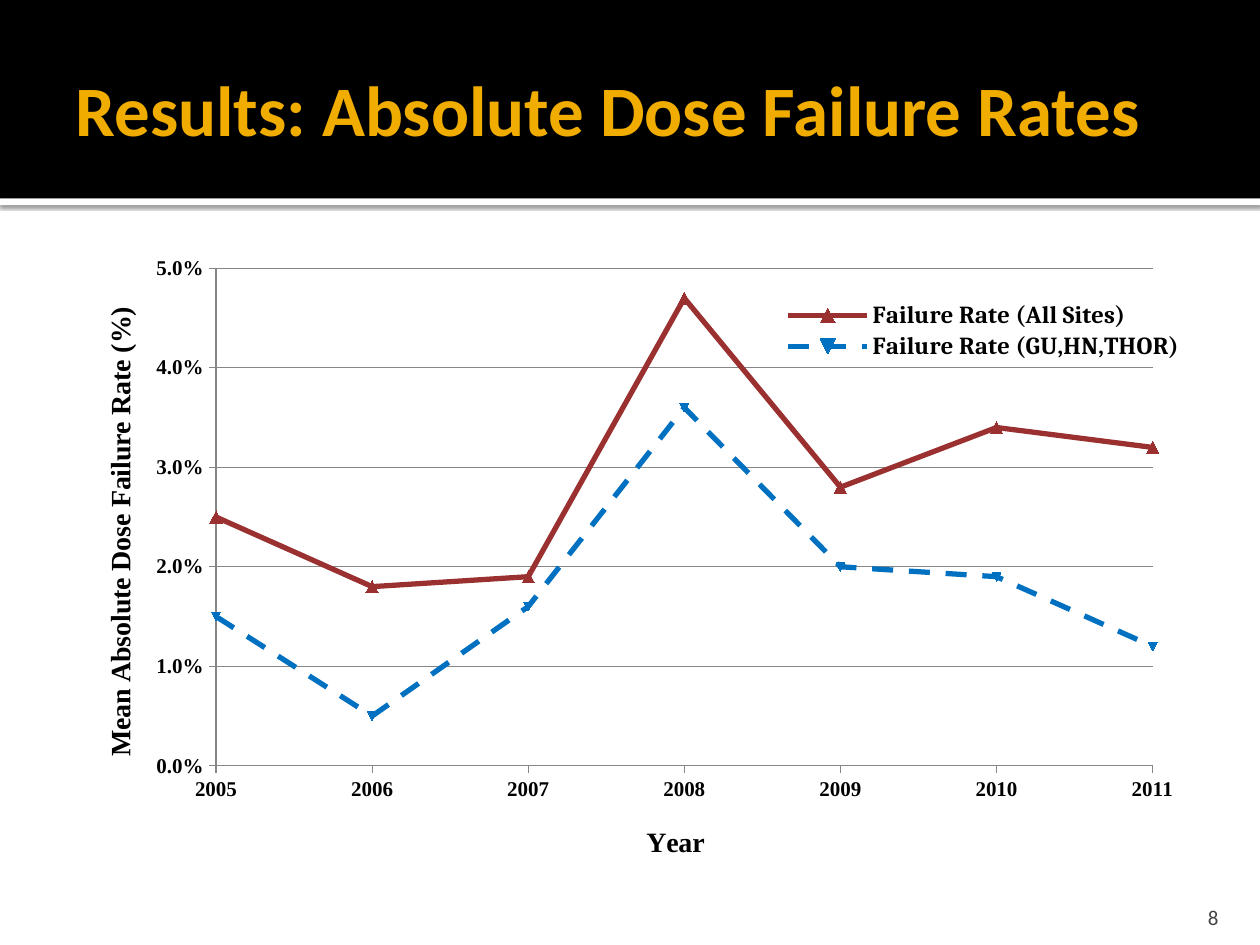
from dataclasses import dataclass

from lxml import etree
from pptx import Presentation
from pptx.chart.data import XyChartData
from pptx.dml.color import RGBColor
from pptx.enum.chart import XL_CHART_TYPE, XL_LEGEND_POSITION, XL_MARKER_STYLE, XL_TICK_MARK
from pptx.enum.dml import MSO_LINE
from pptx.enum.shapes import MSO_SHAPE
from pptx.enum.text import MSO_ANCHOR, PP_ALIGN
from pptx.oxml import parse_xml
from pptx.oxml.ns import nsdecls, qn
from pptx.util import Inches, Pt


@dataclass(frozen=True)
class Theme:
    black: str = "000000"
    white: str = "FFFFFF"
    gold: str = "F0AD00"
    gray: str = "454545"
    grid: str = "868686"
    red: str = "9A3130"
    blue: str = "0070C0"
    body_font: str = "Calibri"
    axis_font: str = "Times New Roman"
    legend_font: str = "Cambria"
    title_size: float = 40.5
    axis_title_size: float = 16
    legend_size: float = 14
    small_size: float = 12
    chart_size: float = 10


YEARS = range(2005, 2012)
ALL_SITES = (0.025, 0.018, 0.019, 0.047, 0.028, 0.034, 0.032)
SELECTED_SITES = (0.015, 0.005, 0.016, 0.036, 0.020, 0.019, 0.012)


def manual_layout(x, y, w=None, h=None, inner=False):
    """Chart layout whose numbers are shares of the chart's size."""
    layout = etree.Element(qn("c:layout"))
    manual = etree.SubElement(layout, qn("c:manualLayout"))
    entries = [("layoutTarget", "inner")] if inner else []
    entries += [("xMode", "edge"), ("yMode", "edge"), ("x", x), ("y", y)]
    if w is not None:
        entries += [("w", w), ("h", h)]
    for tag, value in entries:
        etree.SubElement(manual, qn(f"c:{tag}")).set("val", str(value))
    return layout


def place(part, layout, after=None):
    """Replace the layout of a chart part, following the given child."""
    for old in part.findall(qn("c:layout")):
        part.remove(old)
    part.insert(0 if after is None else part.index(part.find(qn(after))) + 1, layout)


class SlideBuilder:
    def __init__(self, prs, theme):
        self.prs, self.theme = prs, theme
        self.slide = prs.slides.add_slide(prs.slide_layouts[5])

    def box(self, x, y, w, h):
        """Turn shares of the slide into lengths."""
        width, height = self.prs.slide_width, self.prs.slide_height
        return round(x * width), round(y * height), round(w * width), round(h * height)

    def style(self, font, size, color, name=None, bold=False):
        font.name, font.size, font.bold = name or self.theme.body_font, Pt(size), bold
        font.color.rgb = RGBColor.from_string(color)

    def band(self, y, h, color, shadow=False):
        band = self.slide.shapes.add_shape(MSO_SHAPE.RECTANGLE, *self.box(0, y, 1, h))
        band.shadow.inherit = False
        band.fill.solid()
        band.fill.fore_color.rgb = RGBColor.from_string(color)
        band.line.fill.background()
        if shadow:
            band.element.spPr.find(qn("a:effectLst")).append(parse_xml(
                f'<a:outerShdw {nsdecls("a")} blurRad="{Pt(2.5)}" dist="{Pt(0.8)}" dir="5400000">'
                f'<a:srgbClr val="{self.theme.black}"><a:alpha val="60000"/></a:srgbClr>'
                '</a:outerShdw>'))

    def fill_text(self, shape, text, size, color, anchor, align, insets, bold=False):
        frame = shape.text_frame
        frame.text = text
        frame.word_wrap, frame.vertical_anchor = True, anchor
        (frame.margin_left, frame.margin_top,
         frame.margin_right, frame.margin_bottom) = map(Inches, insets)
        paragraph = frame.paragraphs[0]
        paragraph.alignment = align
        self.style(paragraph.runs[0].font, size, color, bold=bold)

    def title(self, text, *area):
        title = self.slide.shapes.title
        title.left, title.top, title.width, title.height = self.box(*area)
        self.fill_text(title, text, self.theme.title_size, self.theme.gold, MSO_ANCHOR.MIDDLE,
                       PP_ALIGN.LEFT, (0.1, 0.05, 0.05, 0.05), bold=True)
        self.slide.shapes.element.append(title.element)  # in front of the bands

    def page_number(self, text, *area):
        number = self.slide.shapes.add_textbox(*self.box(*area))
        self.fill_text(number, text, self.theme.small_size, self.theme.gray, MSO_ANCHOR.BOTTOM,
                       PP_ALIGN.RIGHT, (0.1, 0.05, 0.1, 0))

    def axis(self, axis, title, low, high, step, number_format, title_at):
        theme = self.theme
        axis.minimum_scale, axis.maximum_scale, axis.major_unit = low, high, step
        axis.major_tick_mark, axis.minor_tick_mark = XL_TICK_MARK.OUTSIDE, XL_TICK_MARK.NONE
        axis.tick_labels.number_format = number_format
        axis.tick_labels.number_format_is_linked = False
        self.style(axis.tick_labels.font, theme.small_size, theme.black, theme.axis_font, True)
        axis.format.line.color.rgb = RGBColor.from_string(theme.grid)
        frame = axis.axis_title.text_frame
        frame.text = title
        self.style(frame.paragraphs[0].runs[0].font, theme.axis_title_size, theme.black,
                   theme.axis_font, True)
        place(axis.axis_title.element, manual_layout(*title_at), after="c:tx")

    def line_chart(self, data, looks, *area):
        theme = self.theme
        chart = self.slide.shapes.add_chart(
            XL_CHART_TYPE.XY_SCATTER_LINES, *self.box(*area), data).chart
        self.style(chart.font, theme.chart_size, theme.black)
        chart.has_title = False
        plot = chart.plots[0]
        plot.vary_by_categories = False

        # Axes
        years, rates = chart.category_axis, chart.value_axis
        self.axis(years, "Year", 2005, 2011, 1, "General", (0.51, 0.9))
        self.axis(rates, "Mean Absolute Dose Failure Rate (%)", 0, 0.05, 0.01,
                  "0.0%", (0.03, 0.09))
        years.has_major_gridlines = False
        rates.has_major_gridlines = True
        rates.major_gridlines.format.line.color.rgb = RGBColor.from_string(theme.grid)

        # Legend over the plot
        chart.has_legend = True
        legend = chart.legend
        legend.position = XL_LEGEND_POSITION.RIGHT
        legend.include_in_layout = True
        self.style(legend.font, theme.legend_size, theme.black, theme.legend_font, True)
        chart_xml = chart.element
        place(chart_xml.find(".//" + qn("c:plotArea")),
              manual_layout(0.135, 0.037, 0.826, 0.78, inner=True))
        place(chart_xml.find(".//" + qn("c:legend")),
              manual_layout(0.637, 0.085, 0.35, 0.1), after="c:legendPos")

        # Series
        for series, (color, dash, marker, size) in zip(plot.series, looks):
            rgb = RGBColor.from_string(color)
            series.smooth = False
            line = series.format.line
            line.color.rgb, line.width, line.dash_style = rgb, Pt(3), dash
            series.marker.style, series.marker.size = marker, size
            series.marker.format.fill.solid()
            series.marker.format.fill.fore_color.rgb = rgb
            series.marker.format.line.color.rgb = rgb


def main():
    prs = Presentation()
    prs.slide_width, prs.slide_height = Inches(10), Inches(7.5)
    theme = Theme()
    page = SlideBuilder(prs, theme)

    # Header
    page.band(0.21, 0.007, theme.white, shadow=True)
    page.band(0, 0.21, theme.black)
    page.title("Results: Absolute Dose Failure Rates", 0.05, 0.023, 0.9, 0.183)

    # Failure rates by year
    rates = XyChartData(number_format="0.0%")
    for name, values in (("Failure Rate (All Sites)", ALL_SITES),
                         ("Failure Rate (GU,HN,THOR)", SELECTED_SITES)):
        series = rates.add_series(name)
        for year, rate in zip(YEARS, values):
            series.add_data_point(year, rate)
    looks = ((theme.red, MSO_LINE.SOLID, XL_MARKER_STYLE.TRIANGLE, 7),
             (theme.blue, MSO_LINE.DASH, XL_MARKER_STYLE.AUTOMATIC, 5))
    page.line_chart(rates, looks, 0.05, 0.259, 0.9, 0.675)

    # Footer
    page.page_number("8", 0.897, 0.944, 0.08, 0.04)
    prs.save("out.pptx")


if __name__ == "__main__":
    main()
